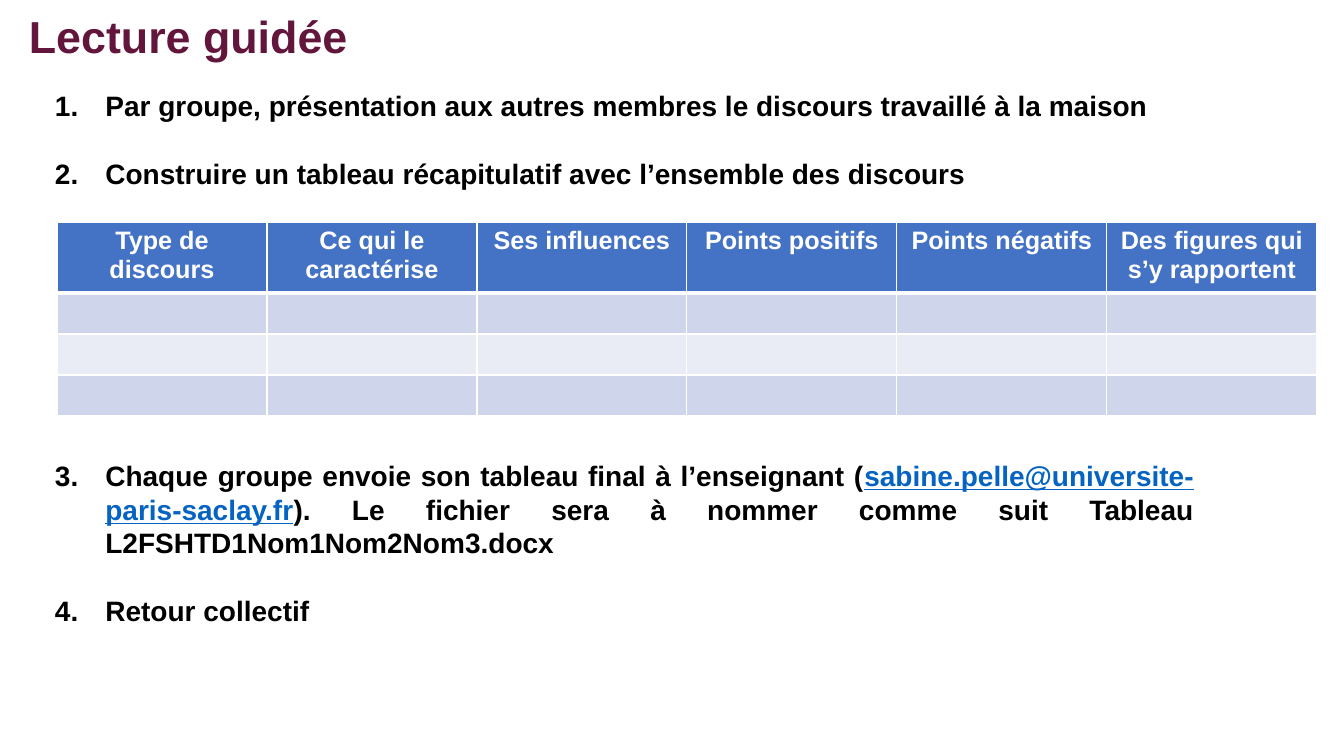
import lxml.etree
import pptx
import pptx.dml.color
import pptx.enum.text
import pptx.oxml
import pptx.oxml.ns
import pptx.util

RGBColor = pptx.dml.color.RGBColor
PP_ALIGN = pptx.enum.text.PP_ALIGN
MSO_ANCHOR = pptx.enum.text.MSO_ANCHOR

PLUM = RGBColor(0x63, 0x16, 0x3C)
BLACK = RGBColor(0x00, 0x00, 0x00)
WHITE = RGBColor(0xFF, 0xFF, 0xFF)
LINK_BLUE = RGBColor(0x05, 0x63, 0xC1)
HEADER_BLUE = RGBColor(0x44, 0x72, 0xC4)
DARK_BAND = RGBColor(0xCF, 0xD5, 0xEA)
LIGHT_BAND = RGBColor(0xE9, 0xEB, 0xF5)

EMAIL = "sabine.pelle@universite-paris-saclay.fr"
STEPS = [
    (0, ["Par groupe, présentation aux autres membres le discours travaillé à la maison"]),
    (24, ["Construire un tableau récapitulatif avec l’ensemble des discours"]),
    (192, ["Chaque groupe envoie son tableau final à l’enseignant (", EMAIL,
           "). Le fichier sera à nommer comme suit Tableau L2FSHTD1Nom1Nom2Nom3.docx"]),
    (24, ["Retour collectif"]),
]
HEADINGS = ["Type de discours", "Ce qui le caractérise", "Ses influences",
            "Points positifs", "Points négatifs", "Des figures qui s’y rapportent"]
BANDS = [DARK_BAND, LIGHT_BAND, DARK_BAND]


def px(length):
    """Convert pixels to EMU."""
    return pptx.util.Emu(round(length * 914400 / 100.8))


class SlideBuilder:
    """Hold the text style and the current slide, and add its elements."""

    font_name = "Arial"

    def __init__(self, presentation):
        self.slide = presentation.slides.add_slide(presentation.slide_layouts[6])

    def style(self, paragraph, size, color):
        """Set the bold font of a paragraph."""
        font = paragraph.font
        font.name = self.font_name
        font.size = pptx.util.Pt(size)
        font.bold = True
        font.color.rgb = color

    def text_frame(self, left, top, width, height):
        """Add a wrapping text box and return its frame."""
        shape = self.slide.shapes.add_textbox(px(left), px(top), px(width), px(height))
        shape.text_frame.word_wrap = True
        return shape.text_frame

    def title(self, text, *box):
        """Add the slide title."""
        frame = self.text_frame(*box)
        frame.vertical_anchor = MSO_ANCHOR.MIDDLE
        paragraph = frame.paragraphs[0]
        paragraph.text = text
        paragraph.line_spacing = 0.9
        self.style(paragraph, 32, PLUM)

    def numbered_list(self, steps, *box):
        """Add a justified list with automatic numbers."""
        frame = self.text_frame(*box)
        for index, (gap, texts) in enumerate(steps):
            paragraph = frame.add_paragraph() if index else frame.paragraphs[0]
            paragraph.alignment = PP_ALIGN.JUSTIFY
            paragraph.line_spacing = pptx.util.Pt(24)
            paragraph.space_before = pptx.util.Pt(gap)
            properties = paragraph._p.get_or_add_pPr()
            properties.set("marL", "457200")
            properties.set("indent", "-457200")
            lxml.etree.SubElement(properties, pptx.oxml.ns.qn("a:buAutoNum"), type="arabicPeriod")
            self.style(paragraph, 20, BLACK)
            for text in texts:
                run = paragraph.add_run()
                run.text = text
                if text == EMAIL:
                    run.font.underline = True
                    run.font.color.rgb = LINK_BLUE

    def cell(self, cell, color, top, bottom):
        """Give a cell white borders and a fill."""
        properties = cell._tc.get_or_add_tcPr()
        for side, width in (("L", 1), ("R", 1), ("T", top), ("B", bottom)):
            properties.append(pptx.oxml.parse_xml(
                f'<a:ln{side} {pptx.oxml.ns.nsdecls("a")} w="{pptx.util.Pt(width)}">'
                f'<a:solidFill><a:srgbClr val="{WHITE}"/></a:solidFill></a:ln{side}>'))
        cell.fill.solid()
        cell.fill.fore_color.rgb = color

    def table(self, headings, bands, left, top, column_width, header_height, row_height):
        """Add a table with a header row and empty banded rows."""
        width = column_width * len(headings)
        height = header_height + row_height * len(bands)
        table = self.slide.shapes.add_table(
            len(bands) + 1, len(headings), px(left), px(top), px(width), px(height)).table
        for column in table.columns:
            column.width = px(column_width)
        for index, color in enumerate([HEADER_BLUE] + bands):
            table.rows[index].height = px(row_height if index else header_height)
            for cell in table.rows[index].cells:
                self.cell(cell, color, 3 if index == 1 else 1, 1 if index else 3)
        for cell, heading in zip(table.rows[0].cells, headings):
            paragraph = cell.text_frame.paragraphs[0]
            paragraph.text = heading
            paragraph.alignment = PP_ALIGN.CENTER
            self.style(paragraph, 18, WHITE)


def main():
    """Build and save the slide."""
    presentation = pptx.Presentation()
    presentation.slide_width = px(1344)
    presentation.slide_height = px(756)
    builder = SlideBuilder(presentation)
    builder.title("Lecture guidée", 19, 0, 966, 78)
    builder.numbered_list(STEPS, 45, 84, 1159, 553)
    builder.table(HEADINGS, BANDS, 57, 222, 210, 71, 41)
    presentation.save("out.pptx")


if __name__ == "__main__":
    main()
